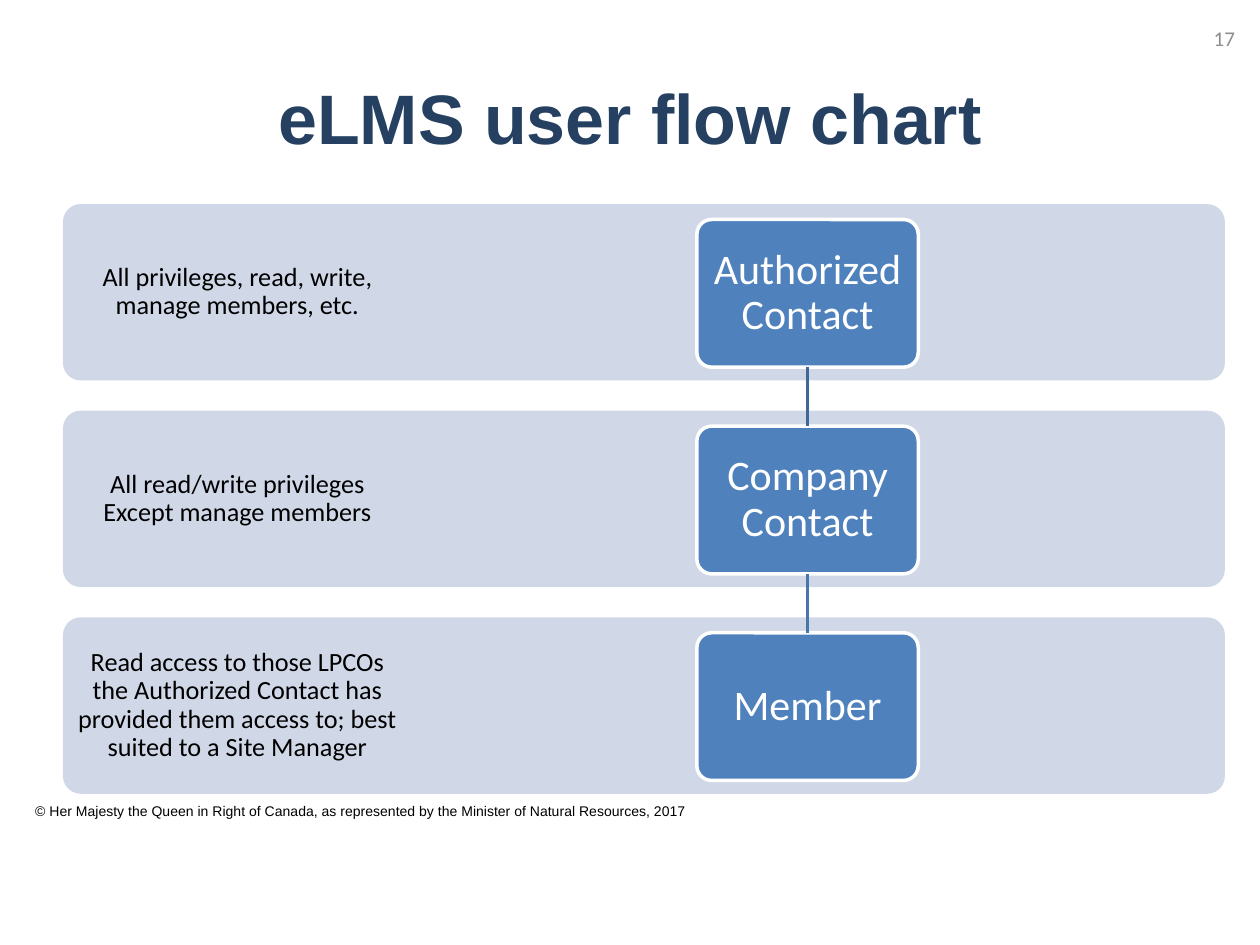
import pptx
import pptx.util
import pptx.dml.color
import pptx.enum.shapes
import pptx.enum.text
import lxml.etree

Pt = pptx.util.Pt
Kind = pptx.enum.shapes.MSO_SHAPE
Align = pptx.enum.text.PP_ALIGN
Anchor = pptx.enum.text.MSO_ANCHOR

LEFT, TOP, STEP = 36, 116.64, 118.08
BAND_W, BAND_H = 664, 100.8
BOX_X, BOX_W, BOX_H = 398.2, 126.5, 84.4
BOX_DY = 8.8
MID = BOX_X + BOX_W / 2

TITLE = {"name": "Arial", "size": Pt(40), "bold": True}
NOTE = {"name": "Calibri", "size": Pt(15)}
ROLE = {"name": "Calibri", "size": Pt(24)}
PAGE = {"name": "Calibri", "size": Pt(12)}
RIGHTS = {"name": "Arial", "size": Pt(8)}

ROWS = [
    ("Authorized Contact", "All privileges, read, write, manage members, etc."),
    ("Company Contact", "All read/write privileges Except manage members"),
    ("Member", "Read access to those LPCOs the Authorized Contact has "
               "provided them access to; best suited to a Site Manager"),
]
LINKS = ["3F6797", "4875AC"]


def tint(target, color):
    target.rgb = pptx.dml.color.RGBColor.from_string(color)


def write(shape, text, font, color, align=Align.CENTER, anchor=Anchor.MIDDLE,
          inset=None, space=None):
    frame = shape.text_frame
    frame.word_wrap = True
    frame.vertical_anchor = anchor
    if inset is not None:
        for side in ("left", "top", "right", "bottom"):
            setattr(frame, "margin_" + side, Pt(inset))
    para = frame.paragraphs[0]
    para.alignment = align
    para.line_spacing = space
    run = para.add_run()
    run.text = text
    for key, value in font.items():
        setattr(run.font, key, value)
    tint(run.font.color, color)


def label(slide, area, text, font, color, **style):
    box = slide.shapes.add_textbox(*map(Pt, area))
    write(box, text, font, color, **style)


def panel(slide, area, fill, edge=None):
    shape = slide.shapes.add_shape(Kind.ROUNDED_RECTANGLE, *map(Pt, area))
    shape.adjustments[0] = 0.1
    shape.shadow.inherit = False
    shape.fill.solid()
    tint(shape.fill.fore_color, fill)
    if edge:
        tint(shape.line.color, edge)
        shape.line.width = Pt(2)
    else:
        shape.line.fill.background()
    return shape


def link(slide, top, end, color):
    line = slide.shapes.add_connector(
        pptx.enum.shapes.MSO_CONNECTOR.STRAIGHT, *map(Pt, (MID, top, MID, end)))
    tint(line.line.color, color)
    line.line.width = Pt(2)
    props = line._element.spPr
    lxml.etree.SubElement(props, pptx.oxml.ns.qn("a:effectLst"))


def main():
    deck = pptx.Presentation()
    deck.slide_width, deck.slide_height = Pt(720), Pt(540)
    slide = deck.slides.add_slide(deck.slide_layouts[6])

    label(slide, (13, 455, 392, 26.6),
          "© Her Majesty the Queen in Right of Canada, as represented by "
          "the Minister of Natural Resources, 2017",
          RIGHTS, "000000", align=Align.LEFT, anchor=Anchor.TOP)
    label(slide, (36, 21.6, 648, 90), "eLMS user flow chart", TITLE, "254061")

    for row, (role, note) in enumerate(ROWS):
        top = TOP + row * STEP
        panel(slide, (LEFT, top, BAND_W, BAND_H), "D0D8E8")
        label(slide, (LEFT, top, 199.4, BAND_H), note, NOTE, "000000",
              inset=8.5, space=0.9)
        box = panel(slide, (BOX_X, top + BOX_DY, BOX_W, BOX_H),
                    "4F81BD", "FFFFFF")
        write(box, role, ROLE, "FFFFFF", inset=6, space=0.9)

    for row, color in enumerate(LINKS):
        top = TOP + row * STEP + BOX_DY
        link(slide, top + BOX_H, top + STEP, color)

    label(slide, (676, 7.2, 36.8, 28.8), "17", PAGE, "8C8C8C",
          align=Align.RIGHT)
    deck.save("out.pptx")


if __name__ == "__main__":
    main()
